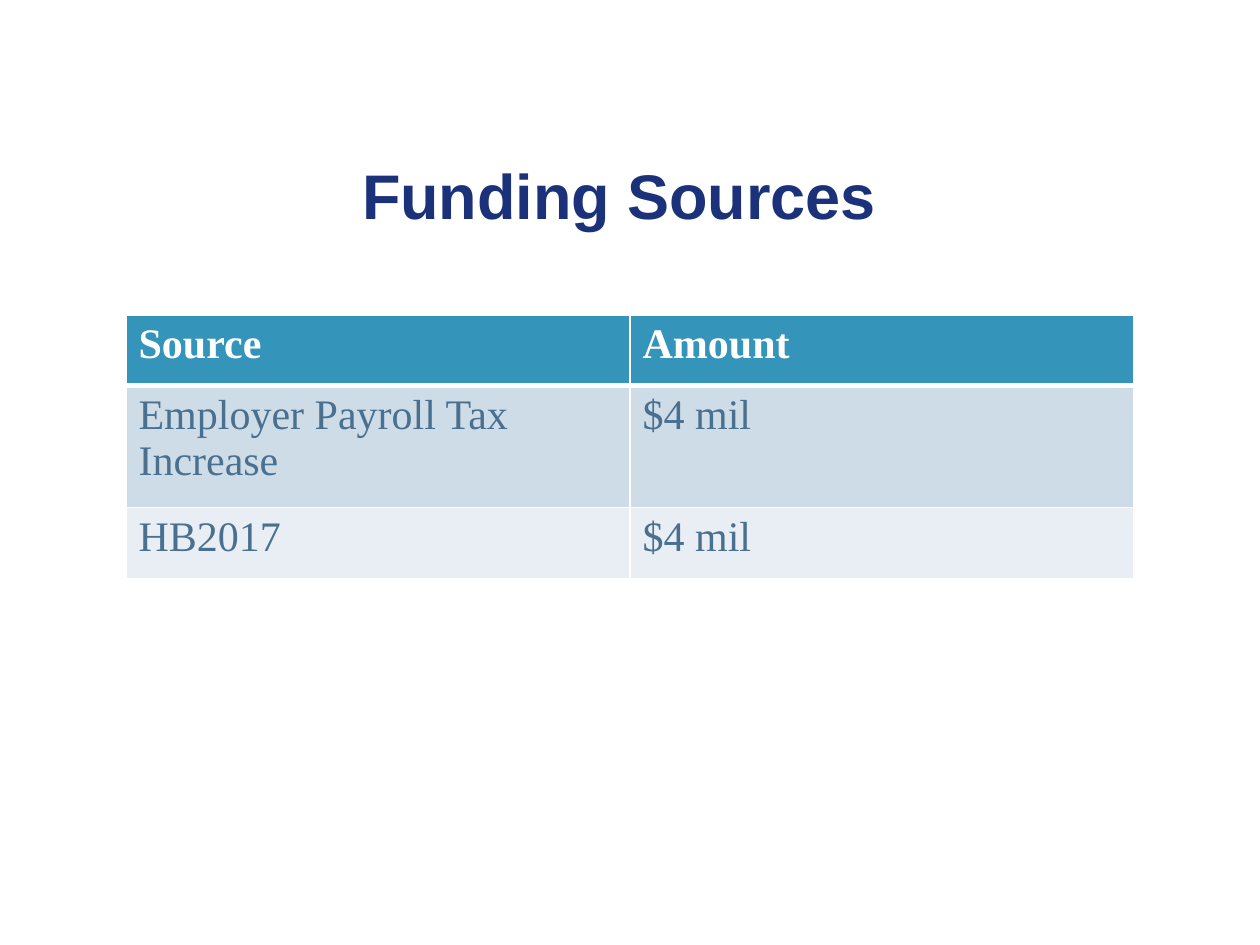
from lxml.etree import SubElement
from pptx import Presentation
from pptx.dml.color import RGBColor
from pptx.enum.text import MSO_ANCHOR as ANCHOR, PP_ALIGN as ALIGN
from pptx.oxml.ns import qn
from pptx.util import Inches, Pt


def rgb(color):
    return RGBColor.from_string(color)


def write(tf, text, font="Times New Roman", size=24, color="4A7090", bold=False, align=ALIGN.LEFT):
    p = tf.paragraphs[0]
    p.alignment = align
    r = p.add_run()
    r.text = text
    r.font.name, r.font.size, r.font.bold = font, Pt(size), bold
    r.font.color.rgb = rgb(color)


prs = Presentation()
prs.slide_width, prs.slide_height = Inches(10), Inches(7.5)
W = prs.slide_width
s = prs.slides.add_slide(prs.slide_layouts[5])

title = s.shapes.title
title.left, title.top = 0, Inches(1.17)
title.width, title.height = Inches(9.83), Inches(0.75)
title.text_frame.vertical_anchor = ANCHOR.MIDDLE
write(title.text_frame, "Funding Sources", font="Arial", size=36, color="1B327A",
      bold=True, align=ALIGN.CENTER)

rows = [
    ("Source", "Amount"),
    ("Employer Payroll Tax Increase", "$4 mil"),
    ("HB2017", "$4 mil"),
]
fills = ["3494BA", "CEDCE7", "E8EEF3"]
heights = [0.56, 0.97, 0.56]

table = s.shapes.add_table(len(rows), 2, W // 10, Inches(2.5), W * 8 // 10,
                           Inches(sum(heights))).table
for i, (texts, fill, height) in enumerate(zip(rows, fills, heights)):
    table.rows[i].height = Inches(height)
    for j, text in enumerate(texts):
        cell = table.cell(i, j)
        tcPr = cell._tc.get_or_add_tcPr()
        for side in "LRTB":
            thick = (i, side) in [(0, "B"), (1, "T")]
            ln = SubElement(tcPr, qn(f"a:ln{side}"), w=str(Pt(3 if thick else 1)))
            SubElement(SubElement(ln, qn("a:solidFill")), qn("a:srgbClr"), val="FFFFFF")
        cell.fill.solid()
        cell.fill.fore_color.rgb = rgb(fill)
        write(cell.text_frame, text, color="4A7090" if i else "FFFFFF", bold=i == 0)

prs.save("out.pptx")
